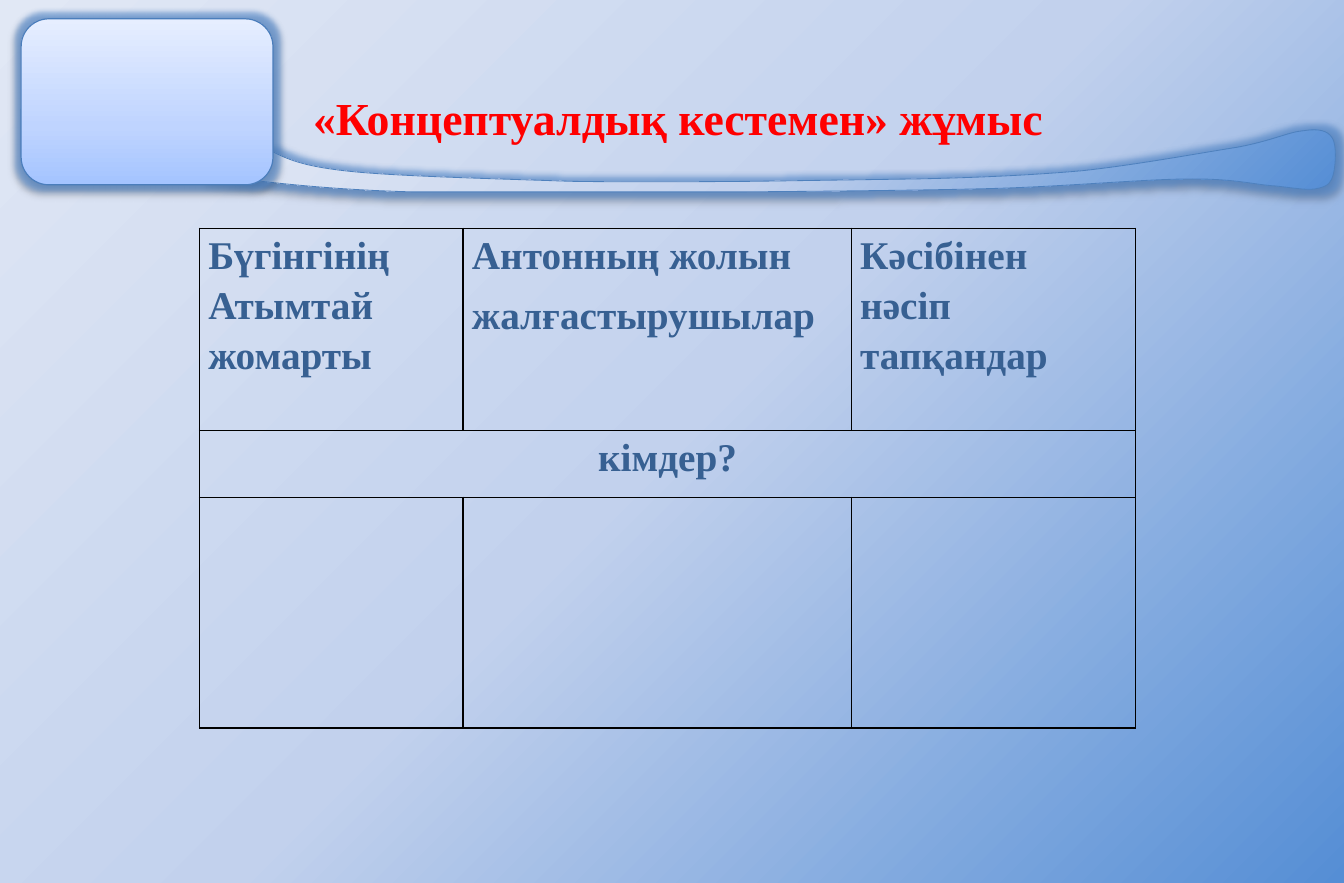
from dataclasses import dataclass

from lxml.etree import SubElement
from pptx import Presentation
from pptx.dml.color import RGBColor
from pptx.enum.shapes import MSO_SHAPE
from pptx.enum.text import MSO_ANCHOR, MSO_AUTO_SIZE, PP_ALIGN
from pptx.oxml.ns import qn
from pptx.util import Inches, Length, Pt

# The slide is a grid of 1142 columns by 750 rows with square cells.
CELL = Inches(0.01)
COLUMNS, ROWS = 1142, 750
FONT = "Times New Roman"
RED, NAVY, BLACK, HALO = "FF0000", "376092", "000000", "558ED5"
SKY = [(0, "558ED5"), (50, "C2D1ED"), (100, "E1E8F5")]
GLASS = [(0, "A4C4FF"), (35, "BFD4FF"), (100, "E6EEFF")]

RIBBON_START = (232, 129)
# Two control points and an end point make a curve; a single point makes a line.
RIBBON = [
    [(246, 136), (260, 142), (302, 146)],
    [(344, 150), (427, 152), (484, 154)],
    [(541, 155), (642, 154), (642, 154)],
    [(779, 152)],
    [(826, 151), (875, 149), (920, 145)],
    [(966, 140), (1020, 130), (1052, 125)],
    [(1083, 119), (1095, 112), (1108, 111)],
    [(1121, 109), (1128, 111), (1132, 117)],
    [(1136, 123), (1135, 140), (1133, 148)],
    [(1131, 155), (1129, 158), (1120, 160)],
    [(1112, 162), (1102, 160), (1084, 158)],
    [(1066, 157), (1052, 152), (1013, 152)],
    [(974, 152), (912, 158), (848, 160)],
    [(784, 162), (627, 163), (627, 163)],
    [(351, 163)],
    [(277, 161), (229, 155), (180, 149)],
]


@dataclass
class Style:
    stops: list
    angle: int
    line: str
    line_width: float
    shadow_alpha: int
    shadow_distance: float


@dataclass
class Entry:
    row: int
    column: int
    text: str
    alignment: PP_ALIGN = PP_ALIGN.LEFT


RIBBON_STYLE = Style(SKY, 225, "4F81BD", 0.5, 35, 1.8)
PANEL_STYLE = Style(GLASS, 270, "4B7EBC", 0.75, 38, 1.6)

TABLE_COLUMNS = [224, 330, 241.5]
TABLE_ROWS = [171.5, 57, 196]
ENTRIES = [
    Entry(0, 0, "Бүгінгінің Атымтай жомарты"),
    Entry(0, 1, "Антонның жолын\nжалғастырушылар"),
    Entry(0, 2, "Кәсібінен нәсіп тапқандар"),
    Entry(1, 0, "кімдер?", PP_ALIGN.CENTER),
]


def cells(count: float) -> Length:
    return Length(round(count * CELL))


def colour(code: str) -> RGBColor:
    return RGBColor.from_string(code)


def add_colour(parent, code: str, alpha: int = 100) -> None:
    node = SubElement(parent, qn("a:srgbClr"), val=code)
    if alpha < 100:
        SubElement(node, qn("a:alpha"), val=str(alpha * 1000))


def paint_gradient(fill, element, stops: list, angle: int) -> None:
    """Fill with any number of stops, the angle running clockwise."""
    fill.gradient()
    fill.gradient_angle = 360 - angle
    stop_list = element.find(".//" + qn("a:gsLst"))
    for stop in list(stop_list):
        stop_list.remove(stop)
    for position, code in stops:
        add_colour(SubElement(stop_list, qn("a:gs"), pos=str(position * 1000)), code)


def apply_style(shape, style: Style) -> None:
    paint_gradient(shape.fill, shape.element, style.stops, style.angle)
    shape.line.color.rgb = colour(style.line)
    shape.line.width = Pt(style.line_width)
    shape.shadow.inherit = False
    effects = shape.element.find(".//" + qn("a:effectLst"))
    add_colour(SubElement(effects, qn("a:glow"), rad=str(Pt(7))), HALO, 60)
    shadow = SubElement(effects, qn("a:outerShdw"), blurRad=str(Pt(3.1)),
                        dist=str(Pt(style.shadow_distance)), dir="5400000", rotWithShape="0")
    add_colour(shadow, BLACK, style.shadow_alpha)


def bend_lines(shape, segments: list) -> None:
    """Turn the straight segments that have control points into Bézier curves."""
    lines = list(shape.element.iter(qn("a:lnTo")))
    for line, segment in zip(lines, segments):
        if len(segment) == 1:
            continue
        curve = SubElement(line.getparent(), qn("a:cubicBezTo"))
        for x, y in segment:
            SubElement(curve, qn("a:pt"), x=str(cells(x) - shape.left),
                       y=str(cells(y) - shape.top))
        line.getparent().replace(line, curve)


def draw_ribbon(page) -> None:
    builder = page.shapes.build_freeform(*map(cells, RIBBON_START))
    ends = [tuple(map(cells, segment[-1])) for segment in RIBBON]
    builder.add_line_segments(ends, close=False)
    ribbon = builder.convert_to_shape()
    bend_lines(ribbon, RIBBON)
    apply_style(ribbon, RIBBON_STYLE)


def draw_panel(page) -> None:
    panel = page.shapes.add_shape(MSO_SHAPE.ROUNDED_RECTANGLE, *map(cells, (18, 16, 214, 141)))
    apply_style(panel, PANEL_STYLE)


def format_text(frame, size: float, code: str, alignment: PP_ALIGN) -> None:
    for index, para in enumerate(frame.paragraphs):
        para.alignment = alignment
        para.line_spacing = 1.15
        para.space_before = Pt(3 if index else 0)
        para.space_after = Pt(3)
        for span in para.runs:
            span.font.name = FONT
            span.font.size = Pt(size)
            span.font.bold = True
            span.font.color.rgb = colour(code)


def write_title(page) -> None:
    title = page.shapes.title
    title.left, title.top, title.width, title.height = map(cells, (256, 64, 886, 64))
    frame = title.text_frame
    frame.text = "«Концептуалдық кестемен» жұмыс"
    frame.word_wrap = True
    frame.auto_size = MSO_AUTO_SIZE.SHAPE_TO_FIT_TEXT
    frame.vertical_anchor = MSO_ANCHOR.TOP
    format_text(frame, 28, RED, PP_ALIGN.LEFT)


def outline_cell(cell) -> None:
    properties = cell._tc.get_or_add_tcPr()
    for side in ("a:lnL", "a:lnR", "a:lnT", "a:lnB"):
        border = SubElement(properties, qn(side), w=str(Pt(1)))
        add_colour(SubElement(border, qn("a:solidFill")), BLACK)
    cell.fill.background()


def draw_table(page) -> None:
    table = page.shapes.add_table(
        len(TABLE_ROWS), len(TABLE_COLUMNS), cells(169.5), cells(194),
        cells(sum(TABLE_COLUMNS)), cells(sum(TABLE_ROWS))).table
    table.first_row = table.horz_banding = False
    for column, width in zip(table.columns, TABLE_COLUMNS):
        column.width = cells(width)
    for row, height in zip(table.rows, TABLE_ROWS):
        row.height = cells(height)
    for cell in table.iter_cells():
        cell.margin_left = cell.margin_right = cells(7.5)
        cell.margin_top = cell.margin_bottom = 0
        outline_cell(cell)
    table.cell(1, 0).merge(table.cell(1, 2))
    for entry in ENTRIES:
        frame = table.cell(entry.row, entry.column).text_frame
        frame.text = entry.text
        format_text(frame, 24, NAVY, entry.alignment)


def main() -> None:
    deck = Presentation()
    deck.slide_width, deck.slide_height = cells(COLUMNS), cells(ROWS)
    page = deck.slides.add_slide(deck.slide_layouts[5])
    paint_gradient(page.background.fill, page.element, SKY, 225)
    draw_ribbon(page)
    draw_panel(page)
    write_title(page)
    draw_table(page)
    deck.save("out.pptx")


if __name__ == "__main__":
    main()
